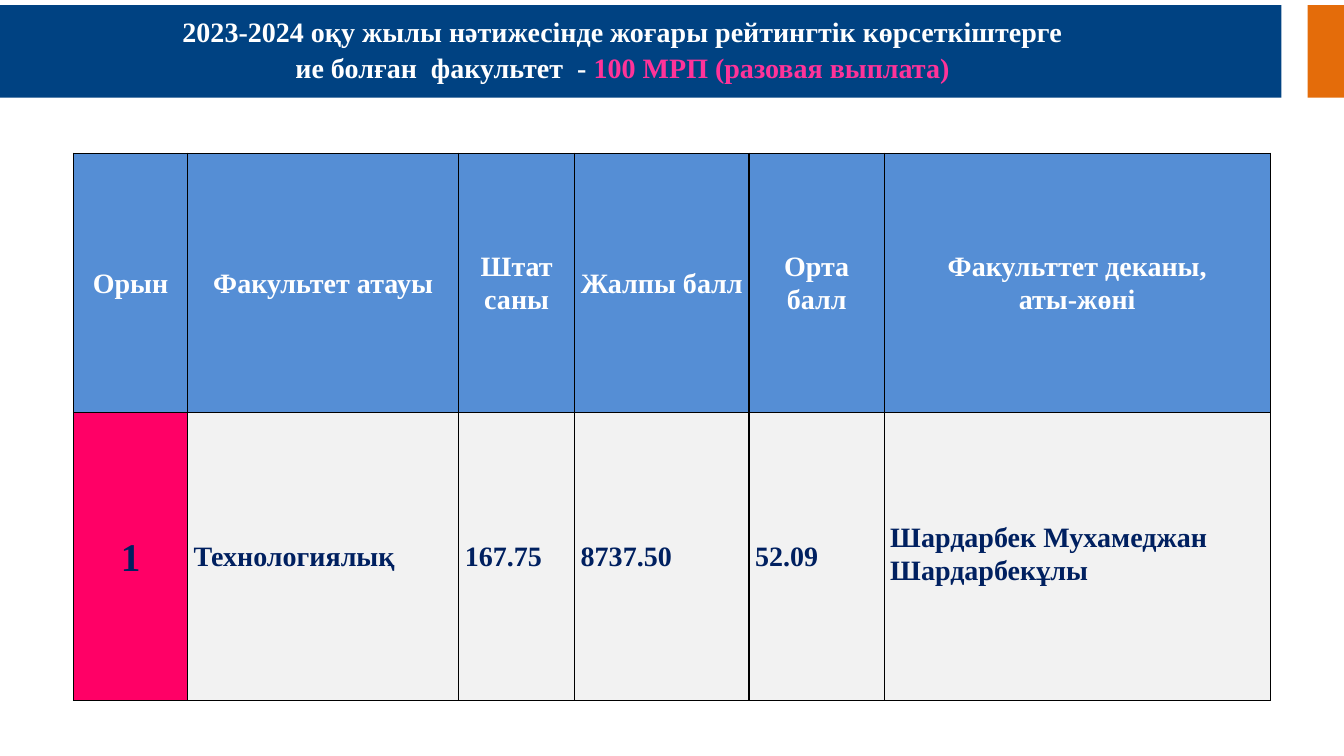
import pptx
import pptx.util
import pptx.dml.color
import pptx.enum.shapes
import pptx.enum.text
import pptx.oxml
import pptx.oxml.ns

Inches = pptx.util.Inches
ALIGN = pptx.enum.text.PP_ALIGN
ANCHOR = pptx.enum.text.MSO_ANCHOR

# Content
FONT = "Times New Roman"
WHITE, NAVY, PINK = "FFFFFF", "002060", "FF3399"
TITLE = [
    [("2023-2024 оқу жылы нәтижесінде жоғары рейтингтік көрсеткіштерге", WHITE)],
    [("ие болған  факультет  - ", WHITE), ("100 МРП (разовая выплата)", PINK)],
]
BANNER_BARS = [(0, 12.71, "004282"), (12.97, 0.36, "E46C0A")]
HEADERS = ["Орын", "Факультет атауы", "Штат саны", "Жалпы балл", "Орта балл",
           "Факульттет деканы,\nаты-жөні"]
WINNER = ["1", "Технологиялық", "167.75", "8737.50", "52.09",
          "Шардарбек Мухамеджан Шардарбекұлы"]
COLUMN_WIDTHS = [1.13, 2.69, 1.15, 1.73, 1.34, 3.83]
ROW_HEIGHTS = [2.57, 2.86]
HEADER_FILL, PLACE_FILL, BODY_FILL = "558ED5", "FF0066", "F2F2F2"
DEAN_TOP_MARGIN = 1.07


def rgb(value):
    return pptx.dml.color.RGBColor.from_string(value)


def style_span(span, color, size=20):
    span.font.name = FONT
    span.font.size = pptx.util.Pt(size)
    span.font.bold = True
    span.font.color.rgb = rgb(color)


def style_paragraph(para, align):
    para.alignment = align
    para.line_spacing = 1.07


def add_borders(cell):
    properties = cell._tc.get_or_add_tcPr()
    for index, side in enumerate(("lnL", "lnR", "lnT", "lnB")):
        properties.insert(index, pptx.oxml.parse_xml(
            f'<a:{side} {pptx.oxml.ns.nsdecls("a")} w="12192"><a:solidFill>'
            f'<a:srgbClr val="000000"/></a:solidFill></a:{side}>'))


def fill_cell(cell, text, fill, color, align, size=20):
    cell.fill.solid()
    cell.fill.fore_color.rgb = rgb(fill)
    cell.margin_left = cell.margin_right = Inches(0.06)
    cell.margin_top = cell.margin_bottom = Inches(0.05)
    cell.vertical_anchor = ANCHOR.MIDDLE
    cell.text_frame.text = text
    for para in cell.text_frame.paragraphs:
        style_paragraph(para, align)
        for span in para.runs:
            style_span(span, color, size)
    add_borders(cell)


deck = pptx.Presentation()
deck.slide_width, deck.slide_height = Inches(13.33), Inches(7.5)
page = deck.slides.add_slide(deck.slide_layouts[6])

# Banner
banner = page.shapes.add_group_shape()
for left, width, color in BANNER_BARS:
    bar = banner.shapes.add_shape(
        pptx.enum.shapes.MSO_SHAPE.RECTANGLE,
        Inches(left), Inches(0.05), Inches(width), Inches(0.92))
    bar.shadow.inherit = False
    bar.fill.solid()
    bar.fill.fore_color.rgb = rgb(color)
    bar.line.fill.background()

# Title
title = page.shapes.add_textbox(Inches(1.39), Inches(0.07), Inches(9.57), Inches(0.81))
title.text_frame.word_wrap = True
for index, line in enumerate(TITLE):
    frame = title.text_frame
    para = frame.add_paragraph() if index else frame.paragraphs[0]
    style_paragraph(para, ALIGN.CENTER)
    for text, color in line:
        span = para.add_run()
        span.text = text
        style_span(span, color)

# Ranking table
table = page.shapes.add_table(
    len(ROW_HEIGHTS), len(COLUMN_WIDTHS), Inches(0.73), Inches(1.52),
    Inches(sum(COLUMN_WIDTHS)), Inches(sum(ROW_HEIGHTS))).table
for row, height in zip(table.rows, ROW_HEIGHTS):
    row.height = Inches(height)
for index, width in enumerate(COLUMN_WIDTHS):
    table.columns[index].width = Inches(width)
    fill_cell(table.cell(0, index), HEADERS[index], HEADER_FILL, WHITE, ALIGN.CENTER)
    if index == 0:
        fill_cell(table.cell(1, index), WINNER[index], PLACE_FILL, NAVY, ALIGN.CENTER, 28)
    else:
        fill_cell(table.cell(1, index), WINNER[index], BODY_FILL, NAVY, ALIGN.LEFT)

# The dean's name hangs from the top of its cell
dean = table.cell(1, len(WINNER) - 1)
dean.vertical_anchor = ANCHOR.TOP
dean.margin_top = Inches(DEAN_TOP_MARGIN)

deck.save("out.pptx")
